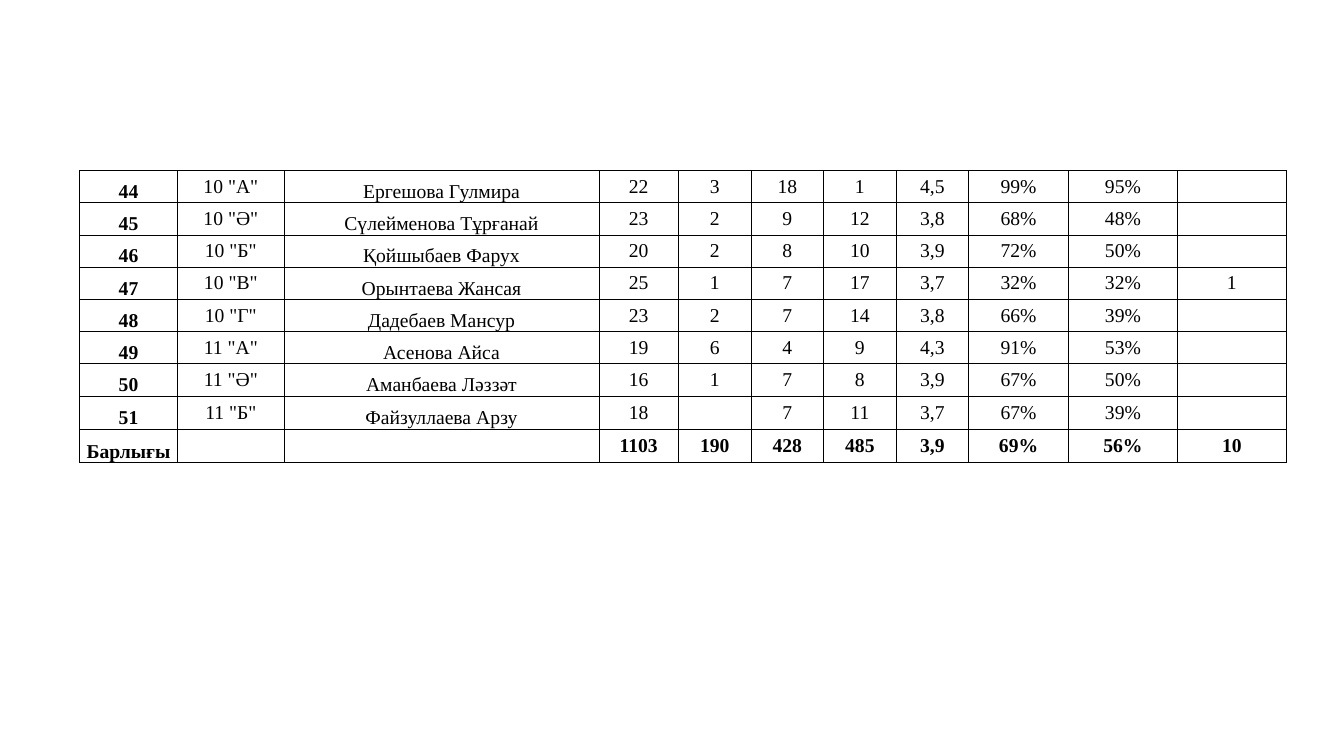
from lxml.etree import SubElement
from pptx import Presentation
from pptx.dml.color import RGBColor
from pptx.enum.text import MSO_ANCHOR, PP_ALIGN
from pptx.oxml.ns import qn
from pptx.util import Inches, Pt

COLUMN_WIDTHS = [0.97, 1.06, 3.12] + [0.79] + [0.72] * 4 + [0.99] + [1.08] * 2
ROW_HEIGHTS = [0.32] * 7 + [0.33] * 2
NUMBER_COLUMN, TEACHER_COLUMN = 0, 2
BLACK, WHITE = "000000", "FFFFFF"
THIN, THICK = 0.5, 1

CLASS_RESULTS = [
    ["44", '10 "А"', "Ергешова Гулмира", "22", "3", "18", "1", "4,5", "99%", "95%", ""],
    ["45", '10 "Ә"', "Сүлейменова Тұрғанай", "23", "2", "9", "12", "3,8", "68%", "48%", ""],
    ["46", '10 "Б"', "Қойшыбаев Фарух", "20", "2", "8", "10", "3,9", "72%", "50%", ""],
    ["47", '10 "В"', "Орынтаева Жансая", "25", "1", "7", "17", "3,7", "32%", "32%", "1"],
    ["48", '10 "Г"', "Дадебаев Мансур", "23", "2", "7", "14", "3,8", "66%", "39%", ""],
    ["49", '11 "А"', "Асенова Айса", "19", "6", "4", "9", "4,3", "91%", "53%", ""],
    ["50", '11 "Ә"', "Аманбаева Ләззәт", "16", "1", "7", "8", "3,9", "67%", "50%", ""],
    ["51", '11 "Б"', "Файзуллаева Арзу", "18", "", "7", "11", "3,7", "67%", "39%", ""],
    ["Барлығы", "", "", "1103", "190", "428", "485", "3,9", "69%", "56%", "10"],
]
TOTAL_ROW = len(CLASS_RESULTS) - 1


def color(value):
    return RGBColor.from_string(value)


def border_widths(row, column):
    """Line widths in points, with thicker lines around the totals."""
    numbered = column == NUMBER_COLUMN
    total = row == TOTAL_ROW
    return {
        "a:lnL": THICK if total and column == 1 else THIN,
        "a:lnR": THICK if total and numbered else THIN,
        "a:lnT": THICK if total and not numbered else THIN,
        "a:lnB": THICK if row >= TOTAL_ROW - 1 and not numbered else THIN,
    }


def set_borders(cell, widths):
    properties = cell._tc.get_or_add_tcPr()
    for position, (tag, width) in enumerate(widths.items()):
        line = SubElement(properties, qn(tag), w=str(Pt(width)))
        fill = SubElement(line, qn("a:solidFill"))
        SubElement(fill, qn("a:srgbClr"), val=BLACK)
        properties.insert(position, line)


def fill_cell(cell, text, row, column):
    numbered = column == NUMBER_COLUMN
    cell.fill.solid()
    cell.fill.fore_color.rgb = color(WHITE)
    side = Inches(0.01) if numbered else 0
    cell.margin_left = cell.margin_right = cell.margin_top = side
    cell.margin_bottom = 0
    at_bottom = column in (NUMBER_COLUMN, TEACHER_COLUMN)
    cell.vertical_anchor = MSO_ANCHOR.BOTTOM if at_bottom else MSO_ANCHOR.MIDDLE
    cell.text = text
    para = cell.text_frame.paragraphs[0]
    para.alignment = PP_ALIGN.CENTER
    para.font.name = "Times New Roman"
    para.font.size = Pt(14)
    para.font.bold = numbered or row == TOTAL_ROW
    para.font.color.rgb = color(BLACK)
    set_borders(cell, border_widths(row, column))


def add_results_table(page, left, top):
    frame = page.shapes.add_table(
        len(ROW_HEIGHTS), len(COLUMN_WIDTHS), Inches(left), Inches(top),
        Inches(sum(COLUMN_WIDTHS)), Inches(sum(ROW_HEIGHTS)))
    table = frame.table
    table.first_row = table.horz_banding = False
    for column, width in zip(table.columns, COLUMN_WIDTHS):
        column.width = Inches(width)
    for row, height in zip(table.rows, ROW_HEIGHTS):
        row.height = Inches(height)
    for row, values in enumerate(CLASS_RESULTS):
        for column, text in enumerate(values):
            fill_cell(table.cell(row, column), text, row, column)


def main():
    deck = Presentation()
    deck.slide_width, deck.slide_height = Inches(13.33), Inches(7.5)
    page = deck.slides.add_slide(deck.slide_layouts[6])
    add_results_table(page, 0.79, 1.69)
    deck.save("out.pptx")


if __name__ == "__main__":
    main()
